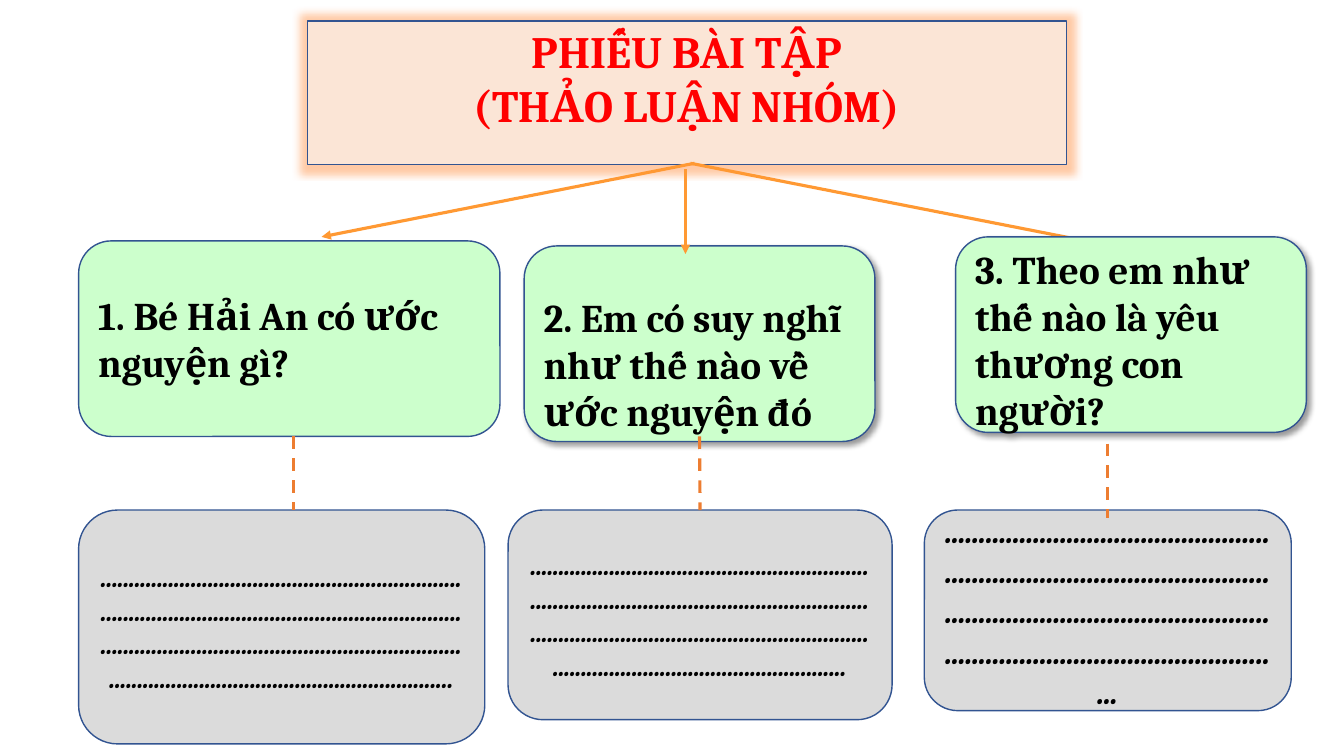
"""Build the group discussion worksheet slide."""
from dataclasses import dataclass
from typing import Optional

from lxml.etree import SubElement
from pptx import Presentation
from pptx.dml.color import RGBColor
from pptx.enum.dml import MSO_LINE_DASH_STYLE as Dash
from pptx.enum.shapes import MSO_CONNECTOR as ConnectorType, MSO_SHAPE as ShapeType
from pptx.enum.text import MSO_ANCHOR as Anchor, MSO_AUTO_SIZE as AutoSize, PP_ALIGN as Align
from pptx.oxml import parse_xml
from pptx.oxml.ns import nsdecls, qn
from pptx.util import Inches, Length, Pt

SLIDE_COLUMNS, SLIDE_ROWS = 133.33, 75
CELL = Inches(0.1)
FONT = "Cambria"
COLORS = {
    "title_fill": "FBE5D6", "title_text": "FF0000", "question": "CCFFCC", "answer": "DBDBDB",
    "outline": "325491", "text": "000000", "arrow": "FF9933", "dash": "ED7D31", "glow": "FF7A1E",
}
GLOW = (f'<a:glow {nsdecls("a")} rad="139700"><a:srgbClr val="{COLORS["glow"]}">'
        '<a:alpha val="40000"/></a:srgbClr></a:glow>')
SHADOW = (f'<a:outerShdw {nsdecls("a")} blurRad="{Pt(4)}" dist="{Pt(3)}" dir="2700000" algn="tl" '
          'rotWithShape="0"><a:srgbClr val="000000"><a:alpha val="40000"/></a:srgbClr></a:outerShdw>')


@dataclass
class Box:
    column: float
    row: float
    columns: float
    rows: float
    text: str
    fill: str
    size: int
    color: str = "text"
    align: Align = Align.CENTER
    italic: bool = False
    inset_top: float = 0.5
    inset_bottom: float = 0.5
    effect: Optional[str] = None


@dataclass
class Link:
    start: tuple[float, float]
    end: tuple[float, float]
    dashed: bool = False
    answer: Optional[int] = None


def question(column: float, row: float, columns: float, text: str,
             inset_top: float = 0.5, effect: Optional[str] = SHADOW) -> Box:
    """Describe a green question box."""
    return Box(column, row, columns, 19.4, text, "question", 28,
               align=Align.LEFT, inset_top=inset_top, effect=effect)


def answer(column: float, columns: float, rows: float, dots: int, size: int) -> Box:
    """Describe a grey box with dotted writing lines."""
    return Box(column, 50.6, columns, rows, "." * dots, "answer", size, italic=True)


TITLE = Box(30.5, 2.1, 75.3, 14.2, "PHIẾU BÀI TẬP\n(THẢO LUẬN NHÓM)", "title_fill", 32,
            "title_text", inset_bottom=3.5, effect=GLOW)
QUESTIONS = [
    question(7.8, 23.9, 41.8, "1. Bé Hải An có ước nguyện gì?", effect=None),
    question(52, 24.4, 34.8, "2. Em có suy nghĩ như thế nào về ước nguyện đó", 4.5),
    question(94.8, 23.5, 34.8, "3. Theo em như thế nào là yêu thương con người?", 1.5),
]
ANSWERS = [
    answer(7.8, 40.3, 23.2, 253, 20),
    answer(50.4, 38.1, 20.8, 232, 20),
    answer(91.7, 36.4, 19.9, 195, 24),
]
RIGHT_ARROW = Link((68.5, 16.2), (109.2, 24.2))
LINKS = [
    Link((68.9, 16.2), (31.9, 23.5)),
    Link((68, 16.8), (68, 25.2)),
    Link((29.1, 43.3), (29.1, 50.6), dashed=True),
    Link((69.4, 43.3), (69.4, 50.6), dashed=True, answer=1),
    Link((109.9, 44), (109.9, 51.4), dashed=True),
]


def cells(count: float) -> Length:
    """Convert grid cells to a length."""
    return Length(round(count * CELL))


def rgb(name: str) -> RGBColor:
    """Look up a named colour."""
    return RGBColor.from_string(COLORS[name])


def format_box(shape, box: Box) -> None:
    """Apply the fill, outline, effect and text of a box."""
    shape.fill.solid()
    shape.fill.fore_color.rgb = rgb(box.fill)
    shape.line.color.rgb = rgb("outline")
    shape.line.width = Pt(1)
    shape.shadow.inherit = False
    if box.effect:
        shape.element.spPr.find(qn("a:effectLst")).append(parse_xml(box.effect))
    frame = shape.text_frame
    frame.text = box.text
    frame.word_wrap = True
    frame.auto_size = AutoSize.NONE
    frame.vertical_anchor = Anchor.MIDDLE
    frame.margin_left = frame.margin_right = cells(1)
    frame.margin_top = cells(box.inset_top)
    frame.margin_bottom = cells(box.inset_bottom)
    for paragraph in frame.paragraphs:
        paragraph.alignment = box.align
        font = paragraph.font
        font.name, font.size = FONT, Pt(box.size)
        font.bold, font.italic = True, box.italic
        font.color.rgb = rgb(box.color)


def format_title(slide, box: Box) -> None:
    """Turn the title placeholder into the glowing heading box."""
    shape = slide.shapes.title
    shape.left, shape.top = cells(box.column), cells(box.row)
    shape.width, shape.height = cells(box.columns), cells(box.rows)
    shape.element.spPr.append(
        parse_xml(f'<a:prstGeom {nsdecls("a")} prst="roundRect"><a:avLst/></a:prstGeom>'))
    format_box(shape, box)


def draw_box(slide, box: Box):
    """Draw a rounded box and return its shape."""
    shape = slide.shapes.add_shape(
        ShapeType.ROUNDED_RECTANGLE, cells(box.column), cells(box.row),
        cells(box.columns), cells(box.rows))
    format_box(shape, box)
    return shape


def draw_link(slide, link: Link):
    """Draw an arrow or a dashed line and return its connector."""
    connector = slide.shapes.add_connector(
        ConnectorType.STRAIGHT, *(cells(value) for value in link.start + link.end))
    connector.line.color.rgb = rgb("dash" if link.dashed else "arrow")
    connector.line.width = Pt(2.25)
    if link.dashed:
        connector.line.dash_style = Dash.DASH
    else:
        SubElement(connector.get_or_add_ln(), qn("a:tailEnd"), type="triangle")
    SubElement(connector.element.spPr, qn("a:effectLst"))
    return connector


def main() -> None:
    """Build and save the presentation."""
    presentation = Presentation()
    presentation.slide_width = cells(SLIDE_COLUMNS)
    presentation.slide_height = cells(SLIDE_ROWS)
    slide = presentation.slides.add_slide(presentation.slide_layouts[5])
    format_title(slide, TITLE)
    draw_link(slide, RIGHT_ARROW)
    for box in QUESTIONS:
        draw_box(slide, box)
    answers = [draw_box(slide, box) for box in ANSWERS]
    for link in LINKS:
        connector = draw_link(slide, link)
        if link.answer is not None:
            connector.end_connect(answers[link.answer], 0)
    presentation.save("out.pptx")


if __name__ == "__main__":
    main()
